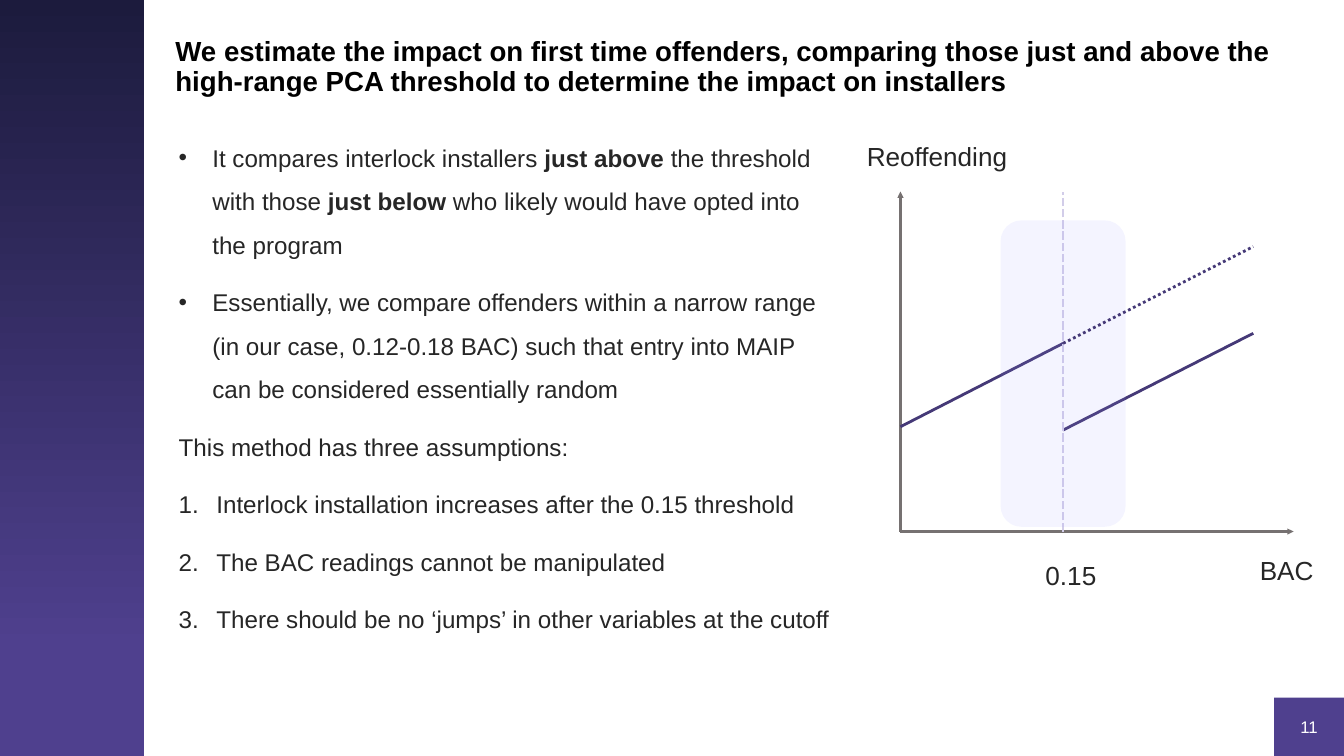
from pptx import Presentation, util as u
from pptx.dml.color import RGBColor
from pptx.enum import dml, shapes, text
from pptx.oxml.ns import qn
from lxml import etree

I = u.Inches
LEFT, MID = text.PP_ALIGN.LEFT, text.PP_ALIGN.CENTER
DASH, DOT = dml.MSO_LINE.SQUARE_DOT, dml.MSO_LINE.ROUND_DOT

THEME = {
    "font": "Arial",
    "head": {"size": 29.6, "color": "000000", "bold": True},
    "body": {"size": 25.9, "color": "262626", "bold": False},
    "label": {"size": 28, "color": "262626", "bold": False},
    "page": {"size": 18, "color": "FFFFFF", "bold": False},
    "dark": "1C1B3D", "brand": "4F408E", "axis": "767171",
    "trend": "453977", "cut": "D2CDE9", "zone": "9999FF",
}

HEAD = ("We estimate the impact on first time offenders, comparing those just and above the "
        "high-range PCA threshold to determine the impact on installers")
BODY = [
    ("dot", ["It compares interlock installers ", "just above ", "the threshold with those ",
             "just below ", "who likely would have opted into the program"]),
    ("dot", ["Essentially, we compare offenders within a narrow range (in our case, "
             "0.12-0.18 BAC) such that entry into MAIP can be considered essentially random"]),
    ("plain", ["This method has three assumptions:"]),
    ("num", ["Interlock installation increases after the 0.15 threshold"]),
    ("num", ["The BAC readings cannot be manipulated"]),
    ("num", ["There should be no ‘jumps’ in other variables at the cutoff"]),
]
MARKS = {
    "dot": (0.5, "buChar", {"char": "•"}),
    "num": (0.56, "buAutoNum", {"type": "arabicPeriod"}),
    "plain": (0, "buNone", {}),
}

X0, CUT, X1 = 13.4, 15.82, 18.65
BASE, TOP = 7.91, 2.85
ZONE_W = 1.86
AXES = [((X0, BASE), (X0, TOP)), ((X0, BASE), (19.25, BASE))]
TRENDS = [((X0, 6.35), (CUT, 5.11)), ((CUT, 6.4), (X1, 4.96))]
GUESS = ((CUT, 5.11), (X1, 3.67))
LABELS = [("0.15", (15.46, 8.04, 1.2, 0.92)),
          ("BAC", (X1, 7.97, 1.2, 0.93)),
          ("Reoffending", (12.8, 1.81, 2.42, 0.92))]

deck = Presentation()
deck.slide_width, deck.slide_height = I(20), I(11.25)
slide = deck.slides.add_slide(deck.slide_layouts[1])
parts = slide.shapes


def rgb(key):
    return RGBColor.from_string(THEME.get(key, key))


def put(obj, vals):
    for key, val in vals.items():
        setattr(obj, key, val)


def place(shape, box):
    put(shape, dict(zip(("left", "top", "width", "height"), map(I, box))))


def frame(shape, anchor=text.MSO_ANCHOR.TOP):
    tf = shape.text_frame
    put(tf, {"word_wrap": True, "auto_size": text.MSO_AUTO_SIZE.NONE,
             "vertical_anchor": anchor})
    return tf


def write(para, words, style, space=1.5, align=LEFT, before=15):
    put(para, {"line_spacing": space, "space_before": u.Pt(before), "alignment": align})
    look = THEME[style]
    for n, word in enumerate(words):
        run = para.add_run()
        run.text = word
        put(run.font, {"name": THEME["font"], "size": u.Pt(look["size"]),
                       "bold": look["bold"] or n % 2 == 1})
        run.font.color.rgb = rgb(look["color"])


def mark(para, kind):
    gap, tag, vals = MARKS[kind]
    props = para._p.get_or_add_pPr()
    props.set("marL", str(I(gap)))
    props.set("indent", str(-I(gap)))
    etree.SubElement(props, qn("a:" + tag), vals)


def block(box, fill=None, kind=shapes.MSO_SHAPE.RECTANGLE):
    shape = parts.add_shape(kind, *map(I, box))
    shape.shadow.inherit = False
    shape.line.fill.background()
    if fill:
        shape.fill.solid()
        shape.fill.fore_color.rgb = rgb(fill)
    return shape


def line(ends, color, width, dash=None, arrow=False):
    (ax, ay), (bx, by) = ends
    link = parts.add_connector(shapes.MSO_CONNECTOR.STRAIGHT, I(ax), I(ay), I(bx), I(by))
    link.line.color.rgb = rgb(color)
    link.line.width = u.Pt(width)
    if dash:
        link.line.dash_style = dash
    if arrow:
        etree.SubElement(link.line._get_or_add_ln(), qn("a:tailEnd"), {"type": "triangle"})
    etree.SubElement(link._element.spPr, qn("a:effectLst"))


side = block((0, 0, 2.14, 11.25))
side.fill.gradient()
side.fill.gradient_angle = 270
for stop, (pos, color) in zip(side.fill.gradient_stops, [(0, "dark"), (0.86, "brand")]):
    stop.position = pos
    stop.color.rgb = rgb(color)

page = block((18.96, 10.38, 1.04, 0.87), "brand")
write(frame(page, text.MSO_ANCHOR.MIDDLE).paragraphs[0], ["11"], "page", 1, MID, 0)

head = parts.title
place(head, (2.51, 0.51, 16.66, 1))
write(frame(head).paragraphs[0], [HEAD], "head", 0.9)

body = slide.placeholders[1]
place(body, (2.56, 1.86, 9.9, 8.52))
tf = frame(body)
for n, (kind, words) in enumerate(BODY):
    para = tf.add_paragraph() if n else tf.paragraphs[0]
    write(para, words, "body")
    mark(para, kind)

for ends in AXES:
    line(ends, "axis", 2.25, arrow=True)
for ends in TRENDS:
    line(ends, "trend", 3)
line(((CUT, BASE), (CUT, TOP)), "cut", 3, DASH)

zone = block((CUT - ZONE_W / 2, 3.28, ZONE_W, 4.56), "zone",
             shapes.MSO_SHAPE.ROUNDED_RECTANGLE)
tint = zone._element.spPr.find(qn("a:solidFill"))[0]
etree.SubElement(tint, qn("a:alpha"), {"val": "10000"})

for word, box in LABELS:
    write(frame(parts.add_textbox(*map(I, box))).paragraphs[0], [word], "label")
line(GUESS, "trend", 3, DOT)

deck.save("out.pptx")
